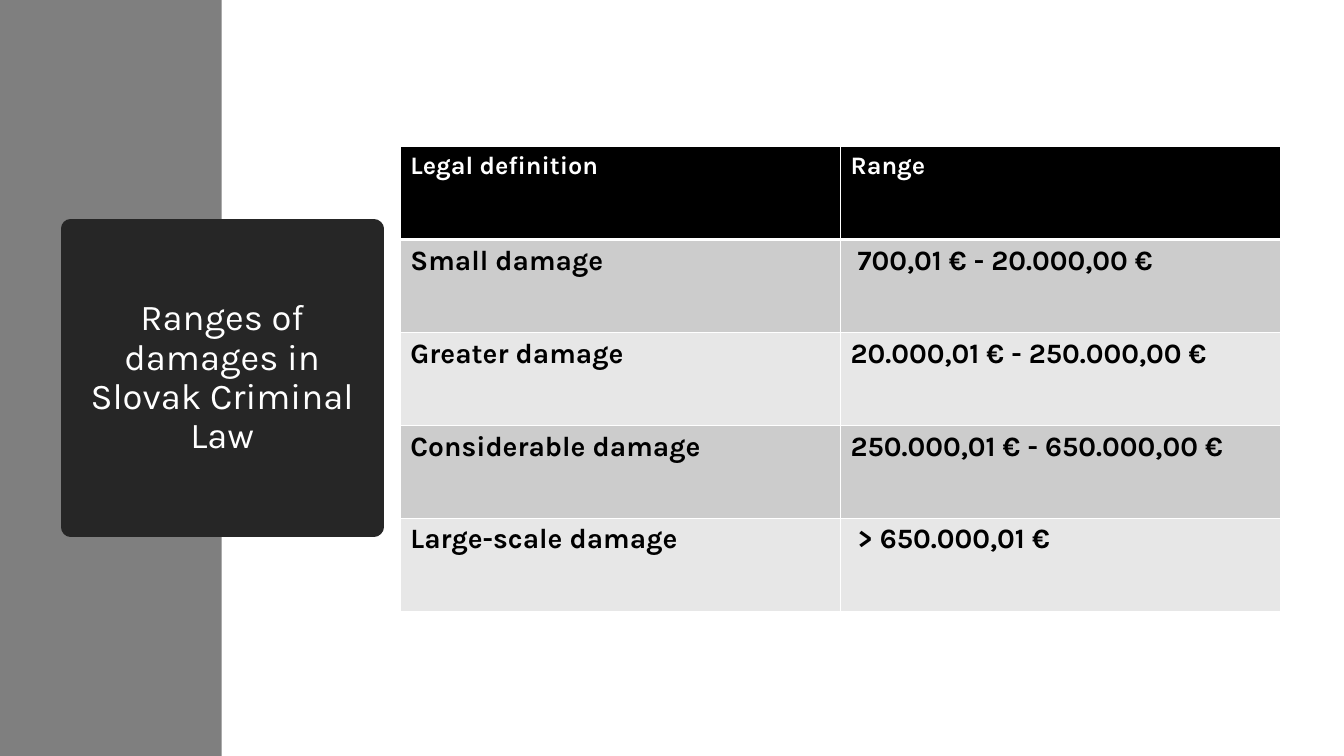
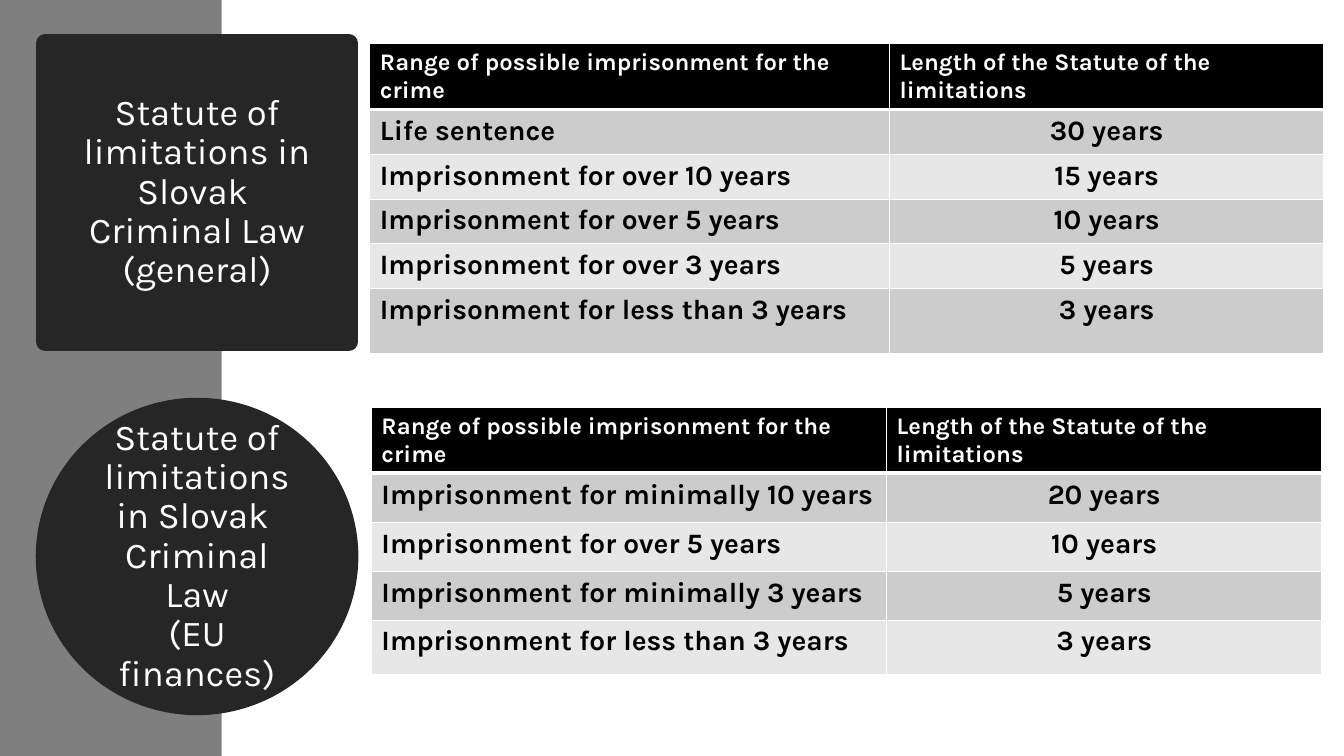
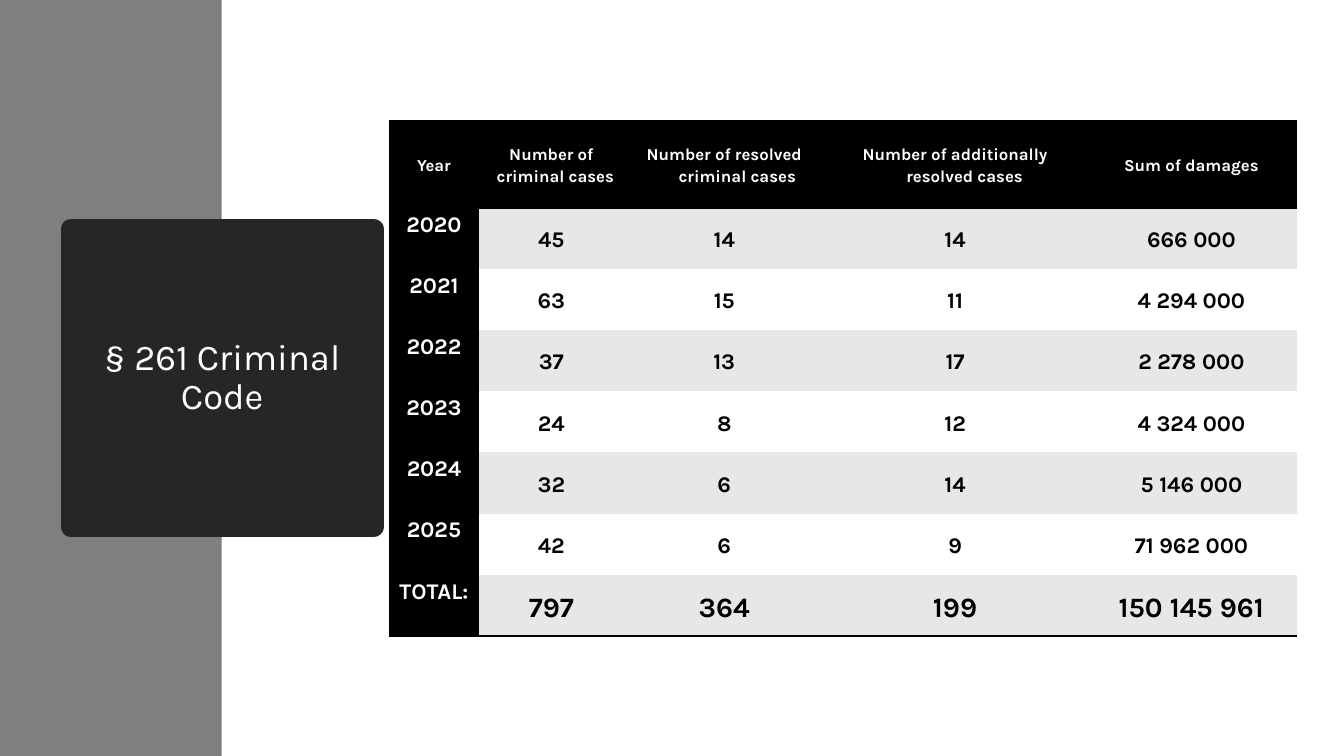
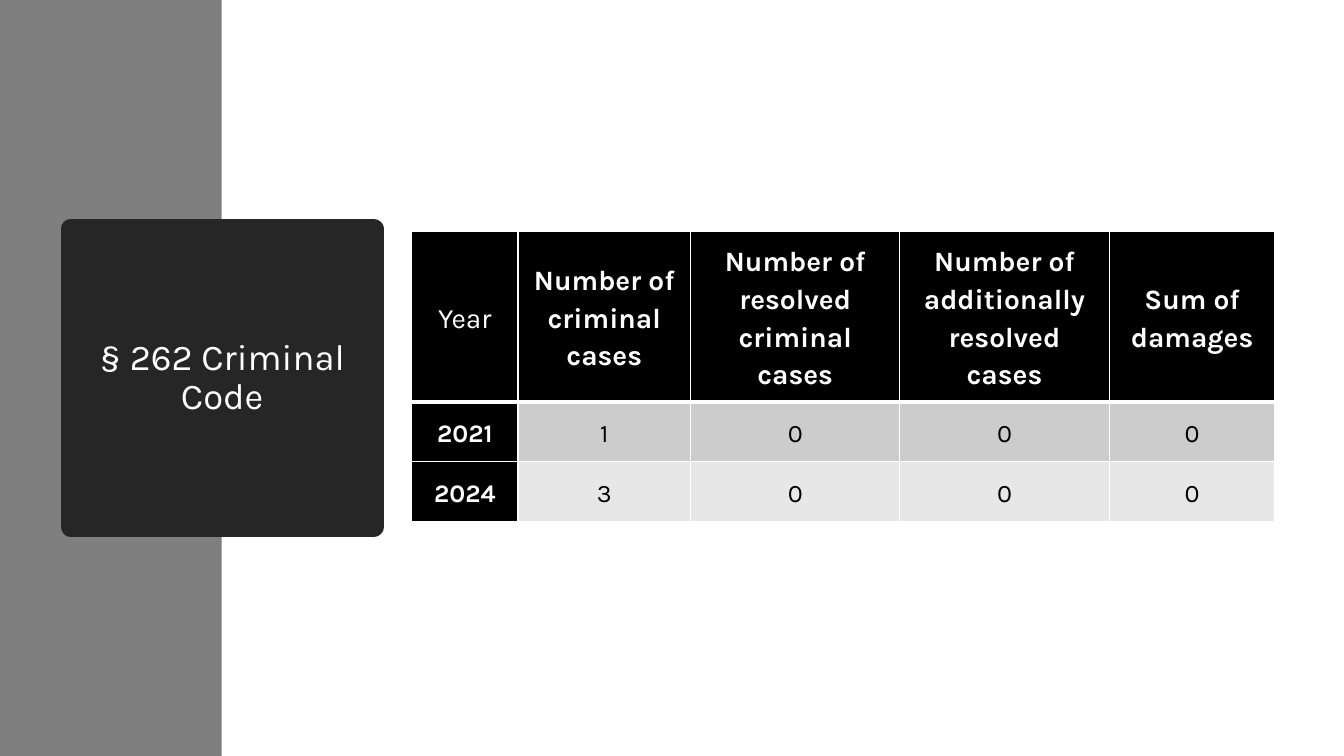
from lxml.etree import SubElement
from pptx import Presentation
from pptx.dml.color import RGBColor
from pptx.enum.shapes import MSO_SHAPE
from pptx.enum.text import MSO_ANCHOR, PP_ALIGN
from pptx.oxml.ns import qn
from pptx.util import Pt

FONT = "Karla"
WHITE, BLACK = "FFFFFF", "000000"
GREY, COAL = "7F7F7F", "262626"
DARK, LIGHT = "CCCCCC", "E7E7E7"
PLAIN = "{2D5ABB26-0587-4C30-8999-92F81FD0307C}"


def tint(code):
    return RGBColor.from_string(code)


class Deck:
    """Holds the shared style and the slide being drawn."""

    def __init__(self):
        self.show = Presentation()
        self.show.slide_width, self.show.slide_height = Pt(960), Pt(540)
        self.page = None

    def start(self):
        self.page = self.show.slides.add_slide(self.show.slide_layouts[6])
        self.shape(MSO_SHAPE.RECTANGLE, 0, 0, 158.4, 540, GREY)

    def shape(self, kind, left, top, wide, high, fill):
        shape = self.page.shapes.add_shape(kind, Pt(left), Pt(top), Pt(wide), Pt(high))
        shape.shadow.inherit = False
        shape.fill.solid()
        shape.fill.fore_color.rgb = tint(fill)
        shape.line.fill.background()
        return shape

    def title(self, text, left=50.4, top=163.5, kind=MSO_SHAPE.RECTANGLE):
        shape = self.shape(kind, left, top, 216.7, 213, COAL)
        shape.line.color.rgb = tint(COAL)
        shape.line.width = Pt(13.75)
        frame = shape.text_frame
        frame.word_wrap = True
        frame.vertical_anchor = MSO_ANCHOR.MIDDLE
        frame.text = text
        for par in frame.paragraphs:
            par.alignment = PP_ALIGN.CENTER
            par.line_spacing = 0.9
            self.style(par, 26, WHITE, False)

    def style(self, par, size, color, bold):
        for run in par.runs:
            font = run.font
            font.name, font.size, font.bold = FONT, Pt(size), bold
            font.color.rgb = tint(color)

    def edge(self, cell, side, color, width):
        line = SubElement(cell._tc.get_or_add_tcPr(), qn("a:ln" + side), w=str(Pt(width)))
        fill = SubElement(line, qn("a:solidFill"))
        SubElement(fill, qn("a:srgbClr"), val=color)

    def frame(self, cell, row):
        for side in "LRTB":
            thick = (row, side) in ((0, "B"), (1, "T"))
            self.edge(cell, side, WHITE, 3 if thick else 1)

    def grid(self, left, top, cols, rows, data, sizes, tones=(DARK, LIGHT),
             side=False, ruled=False):
        holder = self.page.shapes.add_table(
            len(rows), len(cols), Pt(left), Pt(top), Pt(sum(cols)), Pt(sum(rows)))
        table = holder.table
        table.first_row = table.horz_banding = False
        table._tbl.tblPr.find(qn("a:tableStyleId")).text = PLAIN
        for col, wide in zip(table.columns, cols):
            col.width = Pt(wide)
        for row, high in zip(table.rows, rows):
            row.height = Pt(high)
        for i, line in enumerate(data):
            for j, text in enumerate(line):
                cell = table.cell(i, j)
                if not ruled:
                    self.frame(cell, i)
                elif i in (0, len(data) - 1):
                    for edge in "TB" if i == 0 else "B":
                        self.edge(cell, edge, BLACK, 2)
                head = i == 0 or (side and j == 0)
                cell.fill.solid()
                cell.fill.fore_color.rgb = tint(BLACK if head else tones[(i - 1) % 2])
                cell.text = text
                self.style(cell.text_frame.paragraphs[0], sizes[min(i, 1)],
                           WHITE if head else BLACK, True)
        return table

    def center(self, table, first=0):
        for row in list(table.rows)[first:]:
            for cell in list(row.cells)[first:]:
                cell.text_frame.paragraphs[0].alignment = PP_ALIGN.CENTER

    def space(self, table, across, down):
        self.center(table)
        for cell in table.iter_cells():
            cell.margin_left = cell.margin_right = Pt(across)
            cell.margin_top = cell.margin_bottom = Pt(down)
            cell.vertical_anchor = MSO_ANCHOR.MIDDLE
            par = cell.text_frame.paragraphs[0]
            par.line_spacing, par.space_after = 1.15, Pt(8)

    def hang(self, cell, left):
        props = cell.text_frame.paragraphs[0]._p.get_or_add_pPr()
        props.set("marL", str(Pt(left)))
        props.set("indent", str(Pt(-18.7)))


def ranges(deck):
    deck.start()
    deck.title("Ranges of damages in Slovak Criminal Law")
    deck.grid(286, 104.6, [314.4] * 2, [66.4] * 5, [
        ("Legal definition", "Range"),
        ("Small damage", " 700,01 € - 20.000,00 €"),
        ("Greater damage", "20.000,01 € - 250.000,00 €"),
        ("Considerable damage", "250.000,01 € - 650.000,00 €"),
        ("Large-scale damage", " > 650.000,01 €"),
    ], (18, 20))


def limits(deck):
    head = ("Range of possible imprisonment for the crime",
            "Length of the Statute of the limitations")
    lead = "Statute of limitations in Slovak \nCriminal Law\n"
    deck.start()
    deck.title(lead + "(general)", 32.4, 31)
    table = deck.grid(264.2, 31.2, [371.3, 310], [32] * 5 + [46.5], [
        head,
        ("Life sentence", "30 years"),
        ("Imprisonment for over 10 years", "15 years"),
        ("Imprisonment for over 5 years", "10 years"),
        ("Imprisonment for over 3 years", "5 years"),
        ("Imprisonment for less than 3 years", "3 years"),
    ], (17, 20))
    deck.center(table, 1)
    deck.title(lead + "(EU finances)", 32.4, 291, MSO_SHAPE.OVAL)
    table = deck.grid(265.3, 291, [368, 311], [36, 35, 35, 35, 38.7], [
        head,
        ("Imprisonment for minimally 10 years", "20 years"),
        ("Imprisonment for over 5 years", "10 years"),
        ("Imprisonment for minimally 3 years", "5 years"),
        ("Imprisonment for less than 3 years", "3 years"),
    ], (17, 20))
    deck.center(table, 1)


HEADS = ("Year", "Number of criminal cases", "Number of resolved criminal cases",
         "Number of additionally resolved cases", "Sum of damages")


def cases(deck):
    deck.start()
    deck.title("§ 261 Criminal Code")
    table = deck.grid(278, 86.4, [64, 103.7, 143.3, 186.5, 151.2], [62] + [43.7] * 7, [
        HEADS,
        ("2020", "45", "14", "14", "666 000"),
        ("2021", "63", "15", "11", "4 294 000"),
        ("2022", "37", "13", "17", "2 278 000"),
        ("2023", "24", "8", "12", "4 324 000"),
        ("2024", "32", "6", "14", "5 146 000"),
        ("2025", "42", "6", "9", "71 962 000"),
        ("TOTAL:", "797", "364", "199", "150 145 961"),
    ], (12, 16), (LIGHT, WHITE), side=True, ruled=True)
    deck.space(table, 3.6, 0)
    for i, row in enumerate(table.rows):
        lefts = (18.7, 0, 3.6, 0, 18.7) if i else (18.7, 5.8, 18.7, 13.7, 16.6)
        for cell, left in zip(row.cells, lefts):
            deck.hang(cell, left)
        if i:
            row.cells[0].vertical_anchor = MSO_ANCHOR.TOP
    for j in range(1, 5):
        deck.style(table.cell(7, j).text_frame.paragraphs[0], 20, BLACK, True)


def few(deck):
    deck.start()
    deck.title("§ 262 Criminal Code")
    table = deck.grid(294, 165, [76, 123.3, 149.5, 149.5, 118.5], [121.7, 42.7, 42.7], [
        HEADS,
        ("2021", "1", "0", "0", "0"),
        ("2024", "3", "0", "0", "0"),
    ], (20, 18), side=True)
    deck.space(table, 7.2, 7.2)
    for i, row in enumerate(table.rows):
        for j, cell in enumerate(row.cells):
            cell.text_frame.paragraphs[0].runs[0].font.bold = (i > 0) != (j > 0)


def main():
    deck = Deck()
    for draw in (ranges, limits, cases, few):
        draw(deck)
    deck.show.save("out.pptx")


if __name__ == "__main__":
    main()
